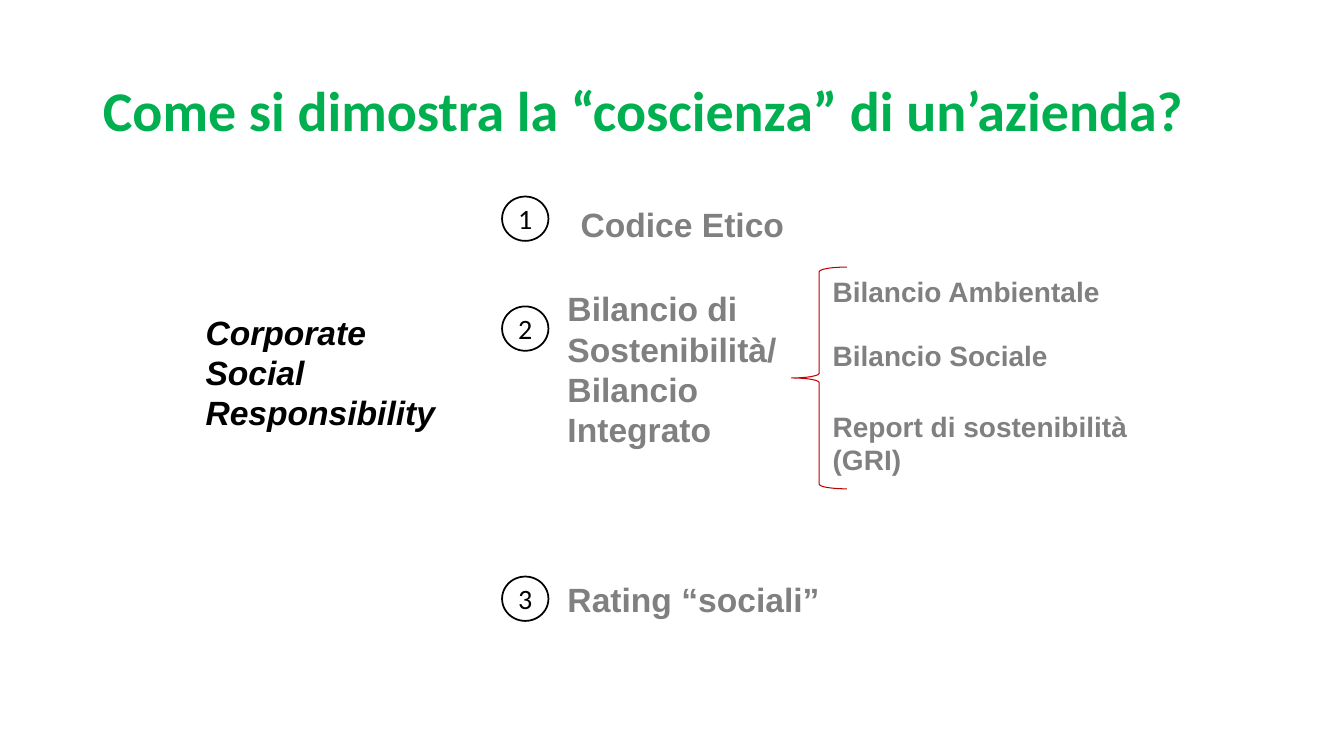
"""Build the slide on how a company demonstrates its social conscience."""
from pptx import Presentation
from pptx.dml.color import RGBColor
from pptx.enum.shapes import MSO_SHAPE
from pptx.enum.text import MSO_ANCHOR, MSO_AUTO_SIZE, PP_ALIGN
from pptx.util import Pt

PX = 9144
GREEN = RGBColor(0x00, 0xB0, 0x50)
GREY = RGBColor(0x80, 0x80, 0x80)
RED = RGBColor(0xC0, 0x00, 0x00)
BLACK = RGBColor(0x00, 0x00, 0x00)
WHITE = RGBColor(0xFF, 0xFF, 0xFF)


def scaled(*lengths):
    return [length * PX for length in lengths]


def format_text(text_frame, font_name, size, color, bold=False, italic=False):
    for paragraph in text_frame.paragraphs:
        for run in paragraph.runs:
            run.font.name = font_name
            run.font.size = Pt(size)
            run.font.color.rgb = color
            run.font.bold = bold
            run.font.italic = italic


presentation = Presentation()
presentation.slide_width, presentation.slide_height = scaled(1333, 750)
slide = presentation.slides.add_slide(presentation.slide_layouts[5])

title = slide.shapes.title
title.left, title.top, title.width, title.height = scaled(92, 40, 1150, 145)
title.text_frame.text = "Come si dimostra la “coscienza” di un’azienda?"
title.text_frame.vertical_anchor = MSO_ANCHOR.MIDDLE
title.text_frame.paragraphs[0].alignment = PP_ALIGN.LEFT
title.text_frame.paragraphs[0].line_spacing = 0.9
format_text(title.text_frame, "Calibri", 40, GREEN, bold=True)

labels = [
    ("Corporate\nSocial Responsibility", 194, 304, 333, 131, 24, BLACK, True),
    ("Codice Etico", 566, 197, 224, 51, 24, GREY, False),
    ("Bilancio di\nSostenibilità/Bilancio Integrato", 553, 281, 232, 172, 24, GREY, True),
    ("Rating “sociali”", 553, 569, 272, 51, 24, GREY, False),
    ("Bilancio Ambientale", 816, 267, 287, 44, 20, GREY, False),
    ("Bilancio Sociale", 816, 331, 235, 44, 20, GREY, False),
    ("Report di sostenibilità (GRI)", 816, 401, 350, 77, 20, GREY, True),
]
for text, left, top, width, height, size, color, wraps in labels:
    label = slide.shapes.add_textbox(*scaled(left, top, width, height))
    label.text_frame.text = text
    label.text_frame.word_wrap = wraps
    label.text_frame.auto_size = MSO_AUTO_SIZE.SHAPE_TO_FIT_TEXT
    format_text(label.text_frame, "Arial", size, color, bold=True, italic=color == BLACK)

brace = slide.shapes.add_shape(MSO_SHAPE.LEFT_BRACE, *scaled(785, 265, 55, 220))
brace.shadow.inherit = False
brace.fill.background()
brace.line.color.rgb = RED
brace.line.width = Pt(0.75)

for number, top in enumerate((195, 304, 572), start=1):
    badge = slide.shapes.add_shape(MSO_SHAPE.OVAL, *scaled(498, top, 46, 44))
    badge.shadow.inherit = False
    badge.fill.solid()
    badge.fill.fore_color.rgb = WHITE
    badge.line.color.rgb = BLACK
    badge.line.width = Pt(1.25)
    text_frame = badge.text_frame
    text_frame.margin_left = text_frame.margin_right = 0
    text_frame.margin_top = text_frame.margin_bottom = 0
    text_frame.vertical_anchor = MSO_ANCHOR.MIDDLE
    text_frame.text = str(number)
    text_frame.paragraphs[0].alignment = PP_ALIGN.CENTER
    format_text(text_frame, "Calibri", 20, BLACK)

presentation.save("out.pptx")
